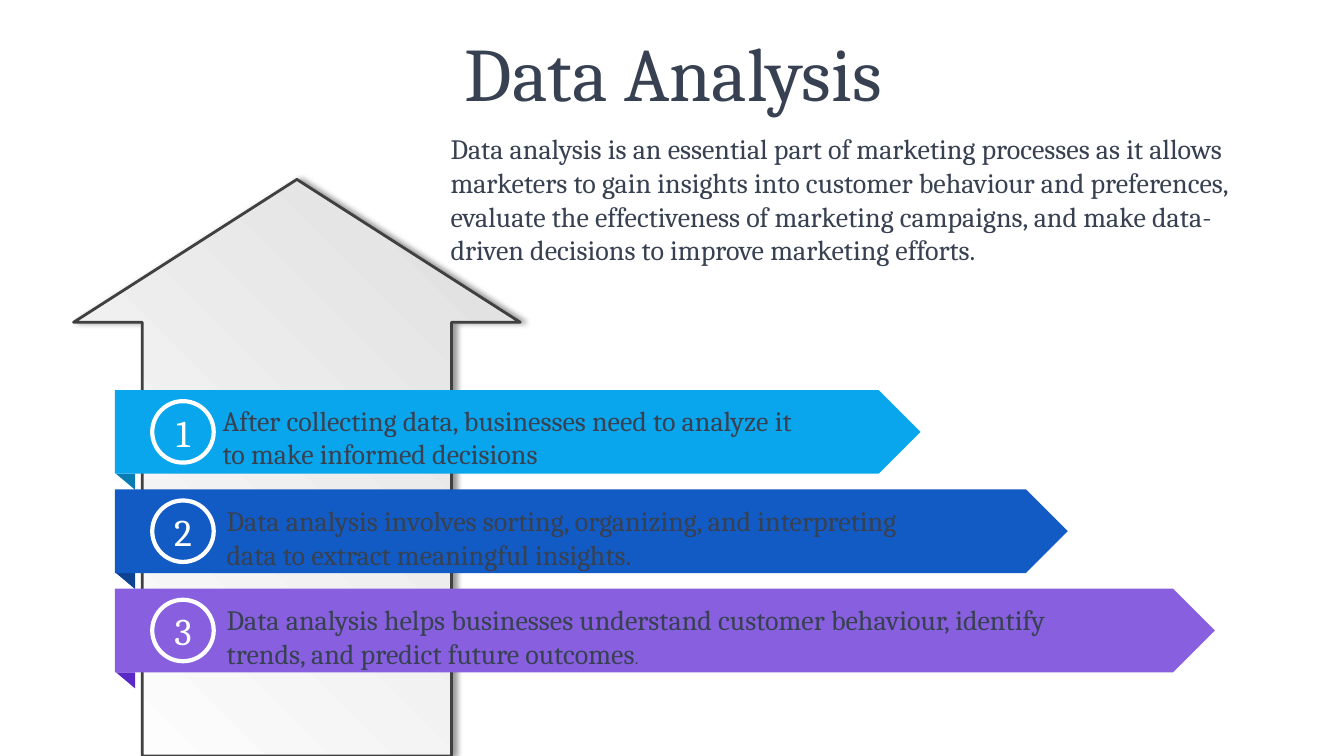
import pptx
import pptx.util
import pptx.dml.color
import pptx.enum.shapes
import pptx.enum.text
import pptx.oxml
import pptx.oxml.ns

Inches = pptx.util.Inches
Pt = pptx.util.Pt
SHAPES = pptx.enum.shapes.MSO_SHAPE
ANCHOR = pptx.enum.text.MSO_ANCHOR
ALIGN = pptx.enum.text.PP_ALIGN
AUTO_SIZE = pptx.enum.text.MSO_AUTO_SIZE

FONT = "Cambria"
COLOURS = {
    "text": "374151",
    "white": "FFFFFF",
    "arrow_start": "DEDEDE",
    "arrow_line": "404040",
    "shadow": "000000",
}
INTRO = (
    "Data analysis is an essential part of marketing processes as it allows marketers "
    "to gain insights into customer behaviour and preferences, evaluate the effectiveness "
    "of marketing campaigns, and make data-driven decisions to improve marketing efforts."
)
STEPS = [
    {
        "banner": "0AA6ED", "fold": "087CB2", "text_box": (2.11, 3.95, 6),
        "runs": [("After collecting data, businesses need to analyze it to make "
                  "informed decisions", 20)],
    },
    {
        "banner": "125AC4", "fold": "0D4393", "text_box": (2.15, 4.95, 7.3),
        "runs": [("Data analysis involves sorting, organizing, and interpreting data "
                  "to extract meaningful insights.", 20)],
    },
    {
        "banner": "875FDF", "fold": "5928C7", "text_box": (2.15, 5.93, 9.07),
        "runs": [("Data analysis helps businesses understand customer behaviour, identify "
                  "trends, and predict future outcomes", 20), (".", 12)],
    },
]
BANNER_LEFT, BANNER_TOP, BANNER_HEIGHT = 1.14, 3.87, 0.83
BANNER_WIDTH, BANNER_GROWTH, BANNER_PITCH = 7.99, 1.46, 0.985
BADGE_SIZE = 0.61


def rgb(value):
    """Turn a hex string into a colour."""
    return pptx.dml.color.RGBColor.from_string(value)


def add_run(paragraph, text, size, colour):
    """Append one formatted run to a paragraph."""
    run = paragraph.add_run()
    run.text = text
    run.font.name = FONT
    run.font.size = Pt(size)
    run.font.color.rgb = rgb(colour)


def add_title(slide, text):
    """Place and format the title placeholder."""
    title = slide.shapes.title
    title.left, title.top = Inches(0.35), Inches(0.37)
    title.width, title.height = Inches(12.66), Inches(0.79)
    frame = title.text_frame
    frame.auto_size = AUTO_SIZE.NONE
    frame.vertical_anchor = ANCHOR.MIDDLE
    paragraph = frame.paragraphs[0]
    paragraph.alignment = ALIGN.CENTER
    paragraph.line_spacing = 0.9
    add_run(paragraph, text, 54, COLOURS["text"])


def add_text(slide, left, top, width, height, runs):
    """Add a wrapping text box made of (text, size) runs."""
    box = slide.shapes.add_textbox(Inches(left), Inches(top), Inches(width), Inches(height))
    box.text_frame.word_wrap = True
    box.text_frame.auto_size = AUTO_SIZE.SHAPE_TO_FIT_TEXT
    for text, size in runs:
        add_run(box.text_frame.paragraphs[0], text, size, COLOURS["text"])


def add_preset(slide, kind, left, top, width, height):
    """Add a preset shape without a shadow."""
    shape = slide.shapes.add_shape(
        kind, Inches(left), Inches(top), Inches(width), Inches(height))
    shape.shadow.inherit = False
    return shape


def paint(shape, colour):
    """Fill a shape with one colour and remove its outline."""
    shape.fill.solid()
    shape.fill.fore_color.rgb = rgb(colour)
    shape.line.fill.background()


def add_growth_arrow(slide):
    """Add the large shaded arrow that points up."""
    arrow = add_preset(slide, SHAPES.UP_ARROW, 0.73, 1.78, 4.43, 5.72)
    arrow.adjustments[0] = 0.692
    arrow.adjustments[1] = 0.32
    arrow.fill.gradient()
    arrow.fill.gradient_angle = 225
    ends = (COLOURS["arrow_start"], COLOURS["white"])
    for position, (stop, colour) in enumerate(zip(arrow.fill.gradient_stops, ends)):
        stop.position = position
        stop.color.rgb = rgb(colour)
    arrow.line.color.rgb = rgb(COLOURS["arrow_line"])
    arrow.line.width = Pt(2)
    effects = arrow.element.spPr.find(pptx.oxml.ns.qn("a:effectLst"))
    effects.append(pptx.oxml.parse_xml(
        f'<a:outerShdw {pptx.oxml.ns.nsdecls("a")} blurRad="{Pt(4)}" dist="{Pt(3)}" '
        f'dir="0" algn="l" rotWithShape="0"><a:srgbClr val="{COLOURS["shadow"]}">'
        '<a:alpha val="40000"/></a:srgbClr></a:outerShdw>'))


def add_fold(slide, top, colour):
    """Add the folded corner under a banner."""
    left, right, bottom = Inches(1.15), Inches(1.34), Inches(top + 0.16)
    builder = slide.shapes.build_freeform(left, Inches(top))
    builder.add_line_segments([(right, Inches(top)), (right, bottom)], close=True)
    fold = builder.convert_to_shape()
    fold.shadow.inherit = False
    paint(fold, colour)


def add_badge(slide, top, number):
    """Add a ringed step number."""
    badge = add_preset(slide, SHAPES.OVAL, 1.51, top, BADGE_SIZE, BADGE_SIZE)
    badge.fill.background()
    badge.line.color.rgb = rgb(COLOURS["white"])
    badge.line.width = Pt(3)
    badge.text_frame.vertical_anchor = ANCHOR.MIDDLE
    paragraph = badge.text_frame.paragraphs[0]
    paragraph.alignment = ALIGN.CENTER
    add_run(paragraph, str(number), 27, COLOURS["white"])


def add_step(slide, index, step):
    """Add a banner with its fold, number and text."""
    top = BANNER_TOP + index * BANNER_PITCH
    add_fold(slide, top + BANNER_HEIGHT, step["fold"])
    banner = add_preset(slide, SHAPES.PENTAGON, BANNER_LEFT, top,
                        BANNER_WIDTH + index * BANNER_GROWTH, BANNER_HEIGHT)
    paint(banner, step["banner"])
    add_badge(slide, top + (BANNER_HEIGHT - BADGE_SIZE) / 2, index + 1)
    add_text(slide, *step["text_box"], 0.77, step["runs"])


def main():
    """Build the slide and save it."""
    presentation = pptx.Presentation()
    presentation.slide_width = Inches(13.33)
    presentation.slide_height = Inches(7.5)
    slide = presentation.slides.add_slide(presentation.slide_layouts[5])
    add_title(slide, "Data Analysis")
    add_growth_arrow(slide)
    for index, step in enumerate(STEPS):
        add_step(slide, index, step)
    add_text(slide, 4.37, 1.26, 8.46, 1.45, [(INTRO, 20)])
    presentation.save("out.pptx")


if __name__ == "__main__":
    main()
